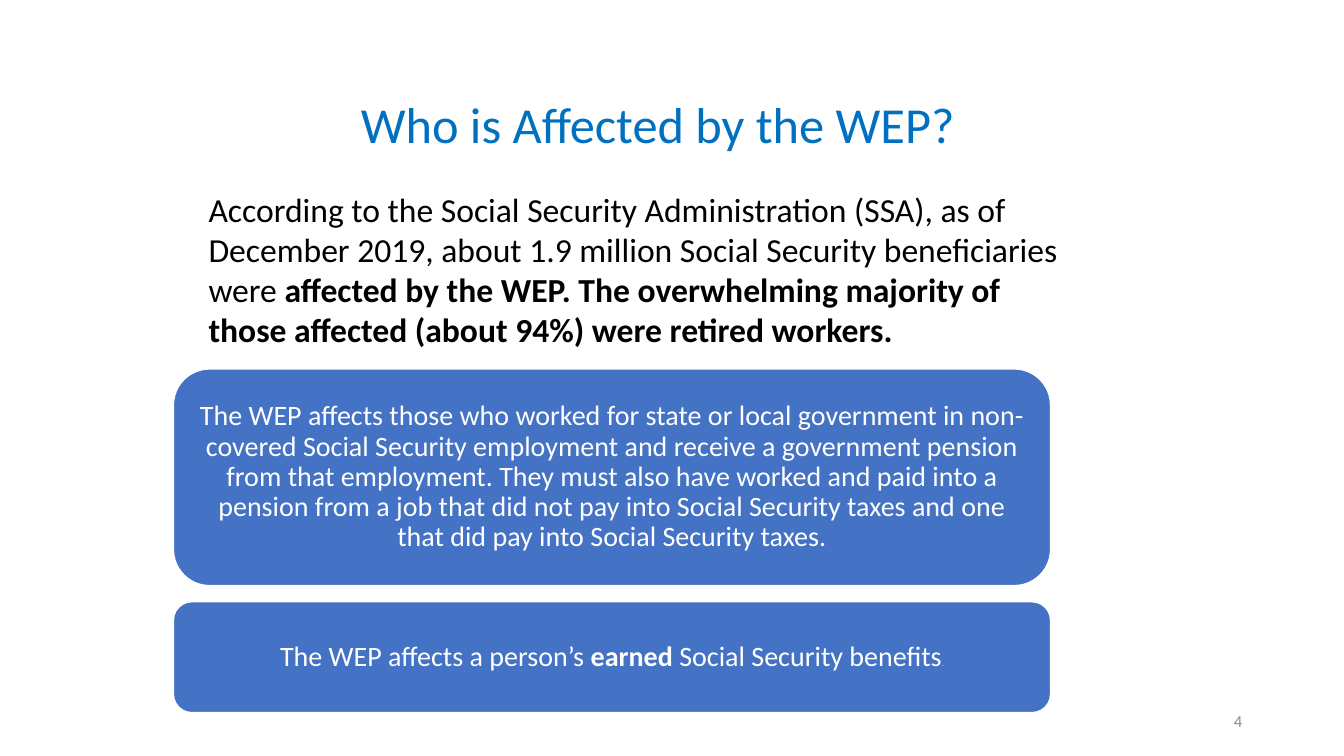
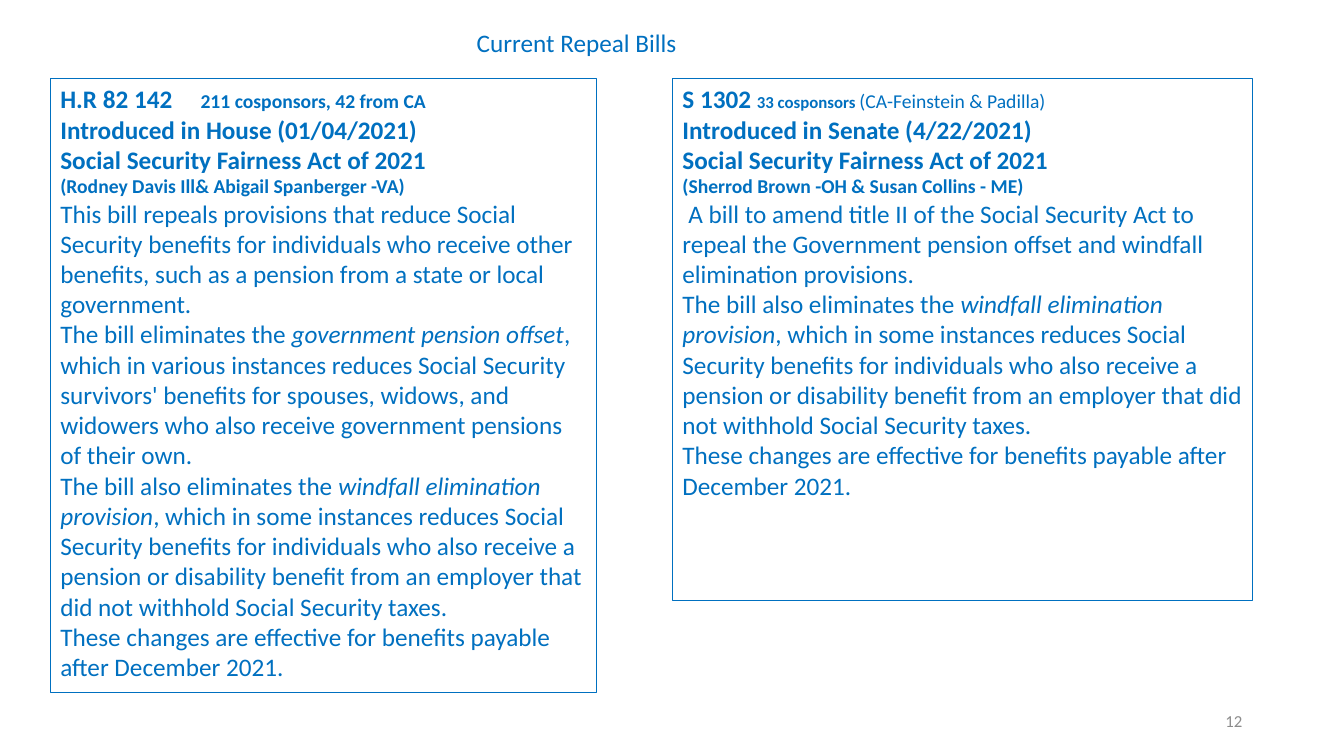
import pptx
import pptx.dml.color
import pptx.enum.shapes
import pptx.enum.text
import pptx.oxml.ns
import pptx.util
from lxml import etree

Inches = pptx.util.Inches
Align = pptx.enum.text.PP_ALIGN
Anchor = pptx.enum.text.MSO_ANCHOR
AutoSize = pptx.enum.text.MSO_AUTO_SIZE
Preset = pptx.enum.shapes.MSO_SHAPE


def color(value):
    return pptx.dml.color.RGBColor.from_string(value)


class Deck:
    FONT = "Calibri"
    BLUE, CARD, BLACK, WHITE, GRAY = "0070C0", "4472C4", "000000", "FFFFFF", "8C8C8C"

    def __init__(self):
        self.presentation = pptx.Presentation()
        self.presentation.slide_width = Inches(13.33)
        self.presentation.slide_height = Inches(7.5)
        self.slide = None

    def new_slide(self, number):
        layout = self.presentation.slide_layouts[6]
        self.slide = self.presentation.slides.add_slide(layout)
        self.text((9.42, 6.95, 3, 0.4), [[(str(number), 12, "")]], self.GRAY,
                  align=Align.RIGHT, anchor=Anchor.MIDDLE, grow=False)

    def add_runs(self, shape, paragraphs, text_color, align=Align.LEFT,
                 anchor=Anchor.TOP, grow=True, spacing=None):
        """Each paragraph is a list of (text, size, style) runs; style holds b or i."""
        frame = shape.text_frame
        frame.word_wrap = True
        frame.vertical_anchor = anchor
        frame.auto_size = AutoSize.SHAPE_TO_FIT_TEXT if grow else AutoSize.NONE
        for index, runs in enumerate(paragraphs):
            paragraph = frame.add_paragraph() if index else frame.paragraphs[0]
            paragraph.alignment = align
            if spacing:
                paragraph.line_spacing = spacing
            for text, size, style in runs:
                run = paragraph.add_run()
                run.text = text
                run.font.name = self.FONT
                run.font.size = pptx.util.Pt(size)
                run.font.bold = "b" in style
                run.font.italic = "i" in style
                run.font.color.rgb = color(text_color)
        return frame

    def text(self, box, paragraphs, text_color, **options):
        shape = self.slide.shapes.add_textbox(*map(Inches, box))
        return self.add_runs(shape, paragraphs, text_color, **options)

    def title(self, box, text, size):
        self.text(box, [[(text, size, "")]], self.BLUE)

    def outline(self, preset, box, line_color, width):
        shape = self.slide.shapes.add_shape(preset, *map(Inches, box))
        shape.shadow.inherit = False
        shape.line.color.rgb = color(line_color)
        shape.line.width = pptx.util.Pt(width)
        return shape

    def card(self, top, height, runs):
        box = (1.72, top, 8.7, height)
        shape = self.outline(Preset.ROUNDED_RECTANGLE, box, self.WHITE, 1)
        shape.fill.solid()
        shape.fill.fore_color.rgb = color(self.CARD)
        frame = self.add_runs(shape, [runs], self.WHITE, align=Align.CENTER,
                              anchor=Anchor.MIDDLE, grow=False, spacing=0.9)
        frame.margin_left = frame.margin_right = Inches(0.08)

    def panel(self, box, paragraphs):
        shape = self.outline(Preset.RECTANGLE, box, self.BLUE, 0.75)
        shape.fill.background()
        return self.add_runs(shape, paragraphs, self.BLUE, grow=False)

    def tab_stop(self, paragraph, position):
        properties = paragraph._p.get_or_add_pPr()
        stops = etree.SubElement(properties, pptx.oxml.ns.qn("a:tabLst"))
        etree.SubElement(stops, pptx.oxml.ns.qn("a:tab"),
                         pos=str(Inches(position)), algn="l")

    def first_line_indent(self, paragraph, distance):
        paragraph._p.get_or_add_pPr().set("indent", str(Inches(distance)))


def affected_slide(deck):
    deck.new_slide(4)
    deck.title((3.48, 0.87, 6.36, 0.71), "Who is Affected by the WEP?", 36)
    deck.text((1.97, 1.82, 8.7, 1.72), [[
        ("According to the Social Security Administration (SSA), as of December 2019, "
         "about 1.9 million Social Security beneficiaries were ", 24, ""),
        ("affected by the WEP. The overwhelming majority of those affected "
         "(about 94%) were retired workers.", 24, "b")]], deck.BLACK)

    # Stacked cards
    deck.card(3.66, 2.15, [
        ("The WEP affects those who worked for state or local government in non-covered "
         "Social Security employment and receive a government pension from that "
         "employment. They must also have worked and paid into a pension from a job that "
         "did not pay into Social Security taxes and one that did pay into Social "
         "Security taxes.", 20, "")])
    deck.card(5.97, 1.1, [
        ("The WEP affects a person’s ", 20, ""), ("earned", 20, "b"),
        (" Social Security benefits", 20, ""), (".", 5, "")])


def bills_slide(deck):
    deck.new_slide(12)
    deck.title((4.63, 0.22, 4.32, 0.4), "Current Repeal Bills", 18)

    # Wording common to both bills
    act = [("Social Security Fairness Act of 2021", 18, "b")]
    closing = [
        [("The bill also eliminates the ", 18, ""),
         ("windfall elimination provision", 18, "i"),
         (", which in some instances reduces Social Security benefits for individuals "
          "who also receive a pension or disability benefit from an employer that did "
          "not withhold Social Security taxes.", 18, "")],
        [("These changes are effective for benefits payable after December 2021.", 18, "")],
    ]

    # House bill
    house = deck.panel((0.5, 0.78, 5.42, 6.09), [
        [("H.R 82 142\t", 18, "b"), ("211 cosponsors, 42 from CA", 14, "b")],
        [("Introduced in House (01/04/2021)", 18, "b")],
        act,
        [("(Rodney Davis Ill& Abigail Spanberger -VA)", 14, "b")],
        [("This bill repeals provisions that reduce Social Security benefits for "
          "individuals who receive other benefits, such as a pension from a state or "
          "local government.", 18, "")],
        [("The bill eliminates the ", 18, ""), ("government pension offset", 18, "i"),
         (", which in various instances reduces Social Security survivors' benefits for "
          "spouses, widows, and widowers who also receive government pensions of their "
          "own.", 18, "")],
        *closing])
    deck.tab_stop(house.paragraphs[0], 1.39)

    # Senate bill
    senate = deck.panel((6.67, 0.78, 5.75, 5.18), [
        [("S 1302 ", 18, "b"), ("33 cosponsors ", 12, "b"),
         ("(CA-Feinstein & Padilla)", 14, "")],
        [("Introduced in Senate (4/22/2021)", 18, "b")],
        act,
        [("(Sherrod Brown -OH & Susan Collins - ME)", 14, "b")],
        [("A bill to amend title II of the Social Security Act to repeal the Government "
          "pension offset and windfall elimination provisions.", 18, "")],
        *closing])
    deck.first_line_indent(senate.paragraphs[4], 0.06)


def main():
    deck = Deck()
    affected_slide(deck)
    bills_slide(deck)
    deck.presentation.save("out.pptx")


if __name__ == "__main__":
    main()
